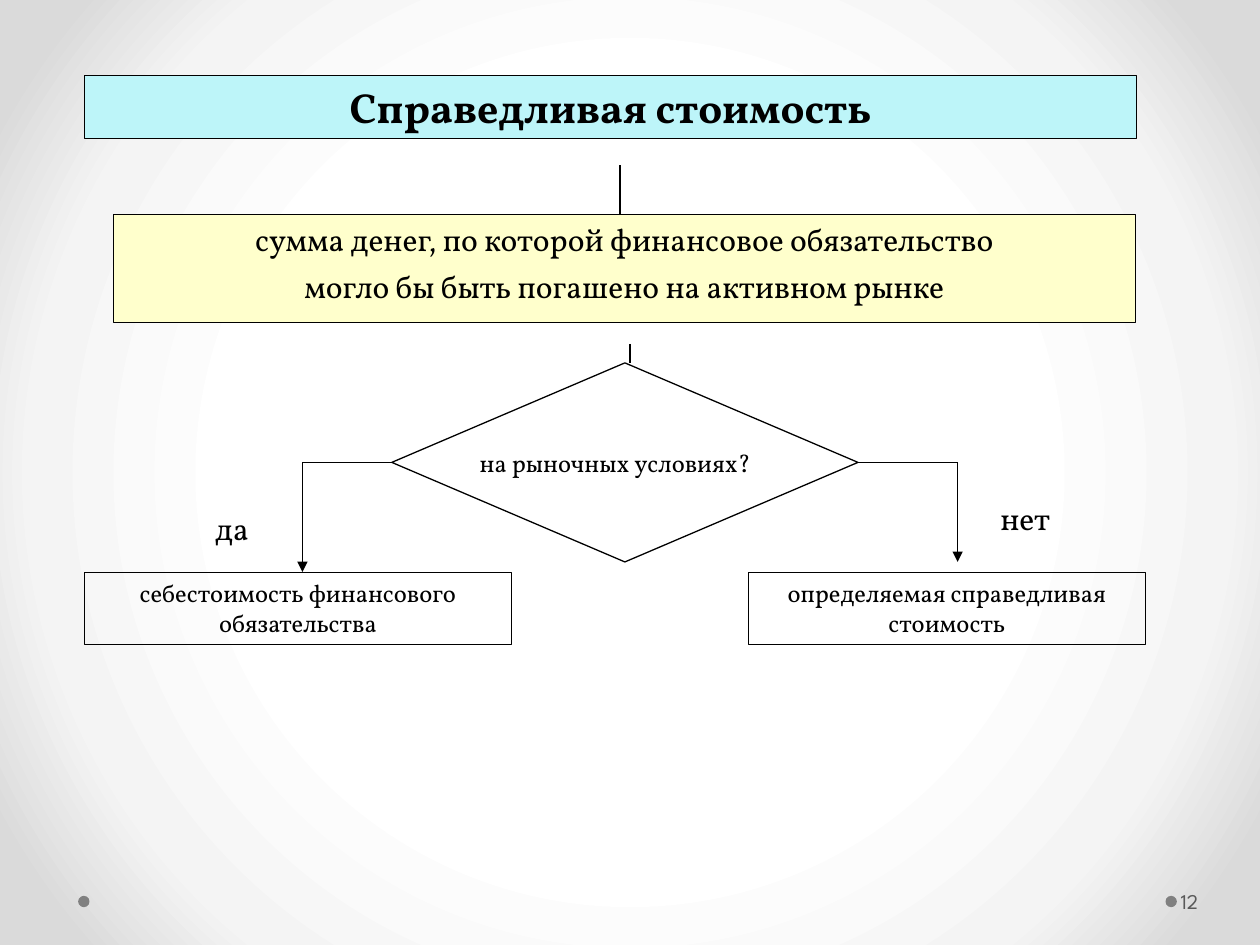
from dataclasses import dataclass

from pptx import Presentation
from pptx.dml.color import RGBColor as RGB
from pptx.enum.shapes import MSO_CONNECTOR as Conn, MSO_SHAPE as Shape
from pptx.enum.text import MSO_ANCHOR as Anchor, PP_ALIGN as Align
from pptx.oxml import parse_xml
from pptx.oxml.ns import nsdecls
from pptx.util import Inches, Pt

COLS, ROWS = 100, 75


@dataclass(frozen=True)
class Theme:
    serif: str = "Vollkorn"
    sans: str = "League Spartan"
    ink: str = "000000"
    muted: str = "595959"
    dot: str = "808080"
    title_fill: str = "BDF5F9"
    body_fill: str = "FFFFCC"
    glow: tuple = ((50, "FFFFFF"), (76, "F4F4F4"), (92, "DADADA"))
    title: int = 24
    body: int = 18
    small: int = 14
    number: int = 12
    rule: float = 0.75
    hairline: float = 0.25
    gap: int = 5


@dataclass(frozen=True)
class Box:
    x: float
    y: float
    w: float
    h: float

    def inner(self, dx, dy, w, h):
        return Box(self.x + dx, self.y + dy, w, h)

    def emu(self):
        return [grid(n) for n in (self.x, self.y, self.w, self.h)]


T = Theme()


def grid(n):
    return Inches(n * 10 / COLS)


def write(sp, *lines, size=T.body, font=T.serif, color=T.ink, bold=False,
          align=Align.CENTER, anchor=Anchor.TOP, left=0.1, right=0.1):
    tf = sp.text_frame
    tf.word_wrap = True
    tf.vertical_anchor = anchor
    tf.margin_left, tf.margin_right = Inches(left), Inches(right)
    tf.margin_top = tf.margin_bottom = Inches(0.05)
    for i, line in enumerate(lines):
        p = tf.add_paragraph() if i else tf.paragraphs[0]
        p.alignment = align
        p.space_before = Pt(T.gap if i else 0)
        r = p.add_run()
        r.text = line
        r.font.size, r.font.name, r.font.bold = Pt(size), font, bold
        r.font.color.rgb = RGB.from_string(color)


def label(s, box, *lines, **fmt):
    write(s.shapes.add_textbox(*box.emu()), *lines, **fmt)


def shape(s, kind, box, fill=None, line=None):
    sp = s.shapes.add_shape(kind, *box.emu())
    sp.shadow.inherit = False
    if fill:
        sp.fill.solid()
        sp.fill.fore_color.rgb = RGB.from_string(fill)
    else:
        sp.fill.background()
    if line:
        sp.line.color.rgb = RGB.from_string(T.ink)
        sp.line.width = Pt(line)
    else:
        sp.line.fill.background()
    return sp


def rule(s, x1, y1, x2, y2, arrow=False):
    c = s.shapes.add_connector(Conn.STRAIGHT, *map(grid, (x1, y1, x2, y2)))
    c.line.color.rgb = RGB.from_string(T.ink)
    c.line.width = Pt(T.rule)
    if arrow:
        c.line._get_or_add_ln().append(
            parse_xml(f'<a:tailEnd {nsdecls("a")} type="triangle"/>'))
    c._element.spPr.append(parse_xml(f'<a:effectLst {nsdecls("a")}/>'))


def backdrop(s):
    stops = "".join(f'<a:gs pos="{pos * 1000}"><a:srgbClr val="{c}"/></a:gs>'
                    for pos, c in T.glow)
    s._element.cSld.insert(0, parse_xml(
        f'<p:bg {nsdecls("p", "a")}><p:bgPr><a:gradFill rotWithShape="1">'
        f'<a:gsLst>{stops}</a:gsLst><a:path path="circle">'
        '<a:fillToRect l="50000" t="50000" r="50000" b="50000"/></a:path>'
        '</a:gradFill><a:effectLst/></p:bgPr></p:bg>'))


def footer(s, box, number):
    for dx in (0, 86.3):
        shape(s, Shape.OVAL, box.inner(dx, 1.6, 0.9, 0.9), fill=T.dot)
    label(s, box.inner(87.2, 0, 6.1, box.h), number, size=T.number,
          font=T.sans, color=T.muted, align=Align.LEFT,
          anchor=Anchor.MIDDLE, left=0.03, right=0.05)


def panel(s, box, *lines, fill=None, line=T.rule, **fmt):
    write(shape(s, Shape.RECTANGLE, box, fill, line), *lines, **fmt)


def definition(s, box, *lines):
    x = box.x + 40.2
    rule(s, x, box.y - 3.9, x, box.y)
    panel(s, box, *lines, fill=T.body_fill)


def decision(s, box, question):
    x = box.x + box.w / 2 + 0.4
    rule(s, x, box.y - 1.5, x, box.y)
    shape(s, Shape.DIAMOND, box, line=T.rule)
    label(s, box.inner(3.2, 6.3, 29.1, 3.4), question, size=T.small)


def branch(s, box, answer, outcome, start, drop, fall, at):
    x = box.x + drop
    rule(s, box.x + start, box.y, x, box.y)
    rule(s, x, box.y, x, box.y + fall, arrow=True)
    label(s, box.inner(*at, 10.2, 4), answer, align=Align.LEFT)
    panel(s, box.inner(0, box.h - 5.7, box.w, 5.7), outcome,
          line=T.hairline, size=T.small)


def main():
    prs = Presentation()
    prs.slide_width, prs.slide_height = grid(COLS), grid(ROWS)
    s = prs.slides.add_slide(prs.slide_layouts[6])
    backdrop(s)
    footer(s, Box(6.2, 69.5, 93.3, 4), "12")
    panel(s, Box(6.7, 6, 83.5, 5), "Справедливая стоимость",
          fill=T.title_fill, size=T.title, bold=True)
    definition(s, Box(9, 17, 81.1, 8.6),
               "сумма денег, по которой финансовое обязательство",
               "могло бы быть погашено на активном рынке")
    decision(s, Box(31.1, 28.8, 37, 15.8), "на рыночных условиях?")
    branch(s, Box(6.7, 36.7, 33.9, 14.4), "да",
           "себестоимость финансового обязательства",
           start=24.4, drop=17.3, fall=8.7, at=(9.4, 3.2))
    branch(s, Box(59.4, 36.7, 31.5, 14.4), "нет",
           "определяемая справедливая стоимость",
           start=8.7, drop=16.6, fall=7.9, at=(19, 2.4))
    prs.save("out.pptx")


if __name__ == "__main__":
    main()
